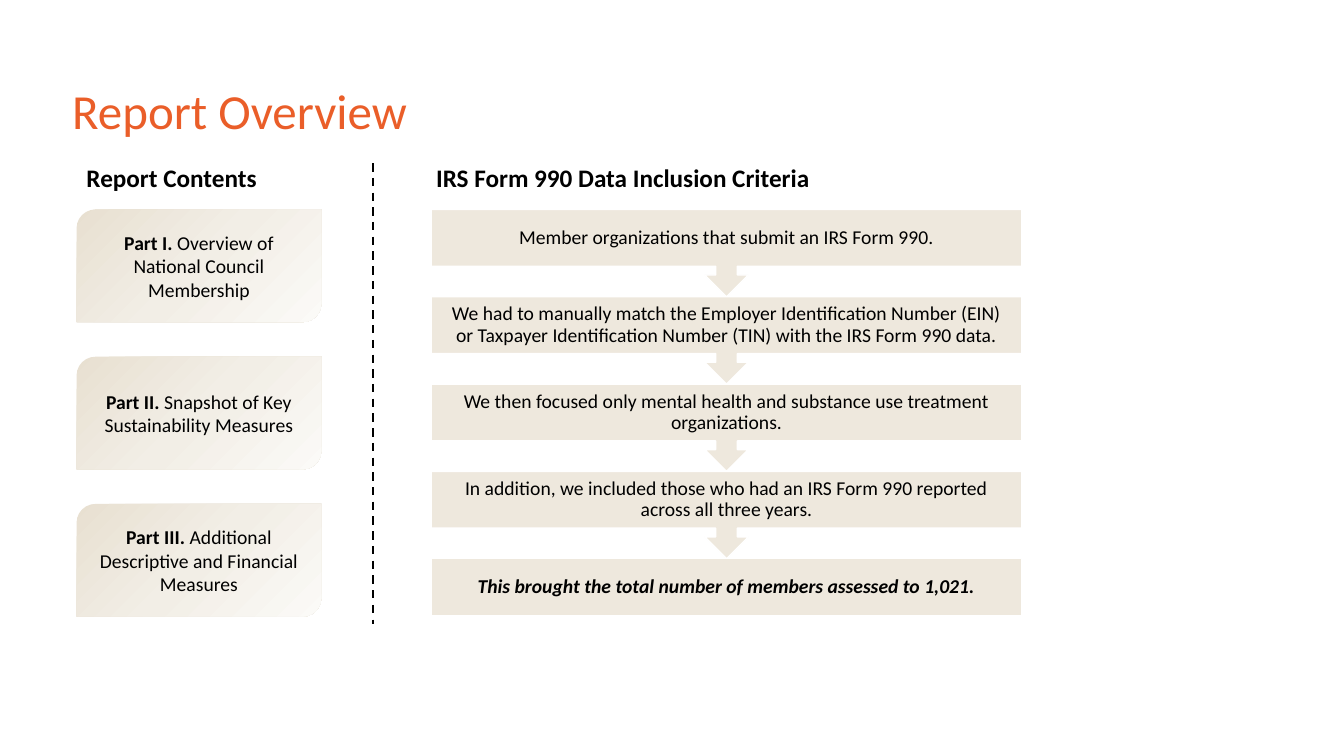
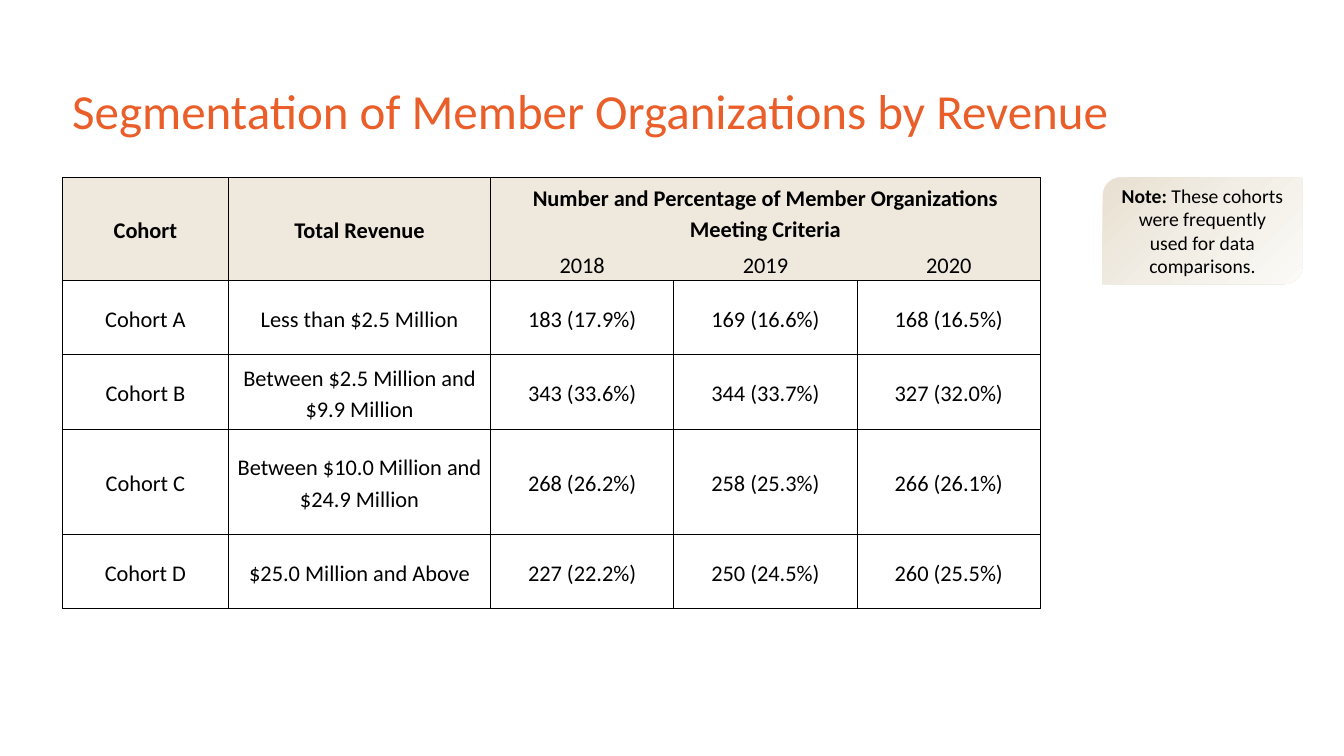
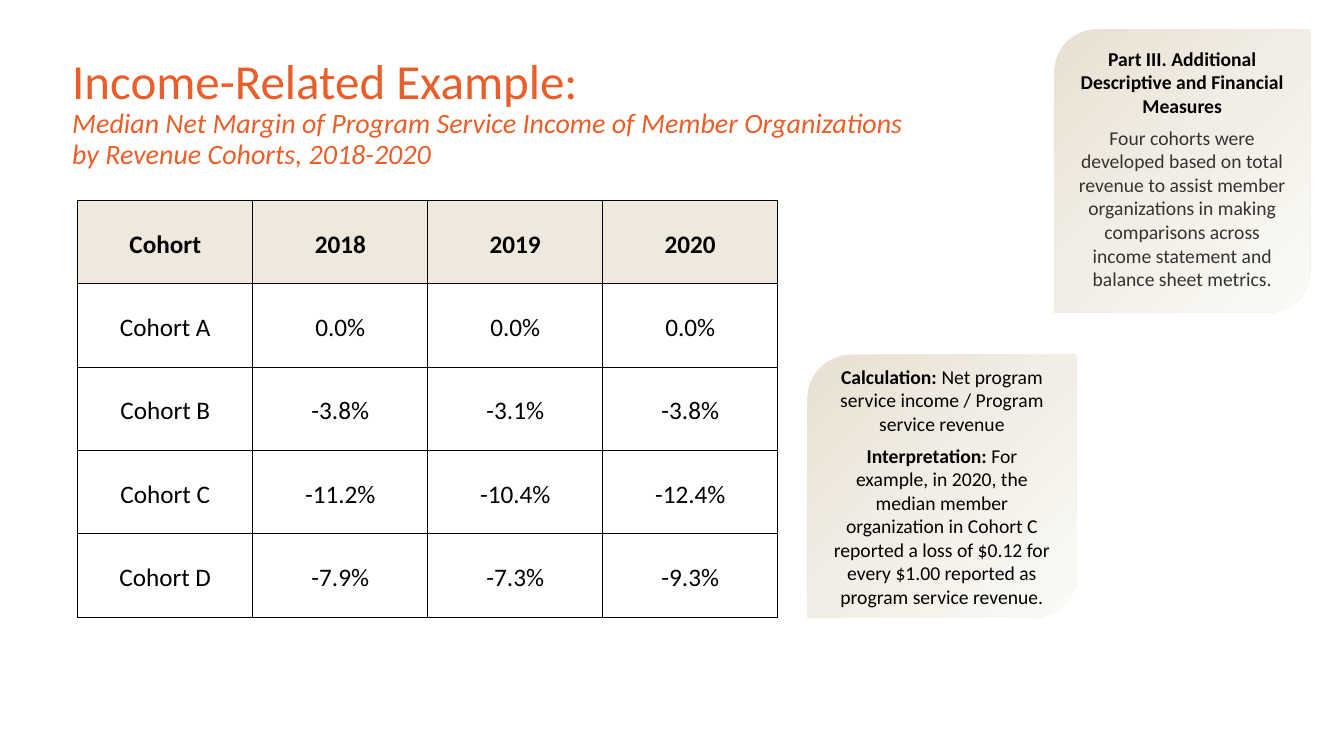
from lxml import etree
from pptx import Presentation
from pptx import util as u
from pptx.dml.color import RGBColor
from pptx.enum import dml, shapes, text
from pptx.oxml import parse_xml
from pptx.oxml.ns import nsdecls, qn

ORANGE = RGBColor(0xEA, 0x5E, 0x29)
BLACK = RGBColor(0x00, 0x00, 0x00)
GREY = RGBColor(0x33, 0x33, 0x33)
WHITE = RGBColor(0xFF, 0xFF, 0xFF)
SAND = RGBColor(0xEE, 0xE8, 0xDD)
CARD_STOPS = (
    (0, RGBColor(0xE8, 0xE0, 0xD1)),
    (50, RGBColor(0xF2, 0xEE, 0xE6)),
    (100, RGBColor(0xFB, 0xFA, 0xF7)),
)
FONT = "Calibri"
TITLE_BOX = (1.57, 1.02, 30.73, 3.68)
COHORTS = ("Cohort A", "Cohort B", "Cohort C", "Cohort D")
BOLD = {"bold": True}


def place(box):
    return [u.Cm(length) for length in box]


def write_text(frame, paragraphs, size=14, color=BLACK, bold=False, italic=False,
               align=text.PP_ALIGN.LEFT, anchor=text.MSO_ANCHOR.MIDDLE,
               line_spacing=1.0, after=0):
    frame.word_wrap = True
    frame.vertical_anchor = anchor
    for index, spans in enumerate(paragraphs):
        para = frame.add_paragraph() if index else frame.paragraphs[0]
        para.alignment = align
        para.line_spacing = line_spacing
        para.space_after = u.Pt(after)
        for words, changes in spans:
            style = {"size": size, "color": color, "bold": bold, "italic": italic, **changes}
            span = para.add_run()
            span.text = words
            span.font.name = FONT
            span.font.size = u.Pt(style["size"])
            span.font.color.rgb = style["color"]
            span.font.bold = style["bold"]
            span.font.italic = style["italic"]


def add_text(page, box, paragraphs, **style):
    write_text(page.shapes.add_textbox(*place(box)).text_frame, paragraphs, **style)


def add_page(deck, title, *subtitle):
    page = deck.slides.add_slide(deck.slide_layouts[6])
    lines = [[(title, {})]]
    lines += [[(line, {"size": 20, "italic": True})] for line in subtitle]
    add_text(page, TITLE_BOX, lines, size=35, color=ORANGE, line_spacing=0.9)
    return page


def add_card(page, box, paragraphs, anchor=text.MSO_ANCHOR.MIDDLE):
    card = page.shapes.add_shape(shapes.MSO_SHAPE.ROUND_2_DIAG_RECTANGLE, *place(box))
    stops = "".join(
        f'<a:gs pos="{percent * 1000}"><a:srgbClr val="{color}"/></a:gs>'
        for percent, color in CARD_STOPS
    )
    card._element.spPr.append(parse_xml(
        f'<a:gradFill {nsdecls("a")} rotWithShape="1"><a:gsLst>{stops}</a:gsLst>'
        '<a:lin ang="2700000" scaled="0"/></a:gradFill>'
    ))
    card.line.fill.background()
    card.shadow.inherit = False
    write_text(card.text_frame, paragraphs, align=text.PP_ALIGN.CENTER,
               anchor=anchor, after=6)


def add_contents(page, box, parts):
    left, top, width, height = box
    card_height = 2.84
    pitch = (height - card_height) / (len(parts) - 1)
    for index, (label, topic) in enumerate(parts):
        add_card(page, (left, top + index * pitch, width, card_height),
                 [[(label, BOLD), (topic, {})]])


def add_steps(page, box, steps):
    left, top, width, height = box
    body_height = 1.44
    last = len(steps) - 1
    pitch = (height - body_height) / last
    for index, words in enumerate(steps):
        is_last = index == last
        kind = shapes.MSO_SHAPE.RECTANGLE if is_last else shapes.MSO_SHAPE.DOWN_ARROW_CALLOUT
        step_height = body_height if is_last else pitch
        step = page.shapes.add_shape(
            kind, *place((left, top + index * pitch, width, step_height)))
        step.fill.solid()
        step.fill.fore_color.rgb = SAND
        step.line.color.rgb = WHITE
        step.line.width = u.Pt(1)
        step.shadow.inherit = False
        frame = step.text_frame
        frame.margin_left = frame.margin_right = u.Cm(0.28)
        frame.margin_top = frame.margin_bottom = u.Cm(0)
        write_text(frame, [[(words, {})]], bold=is_last, italic=is_last,
                   align=text.PP_ALIGN.CENTER, line_spacing=0.9)


def add_divider(page, x, top, bottom):
    divider = page.shapes.add_connector(
        shapes.MSO_CONNECTOR.STRAIGHT, *place((x, top, x, bottom)))
    divider.line.color.rgb = BLACK
    divider.line.width = u.Pt(1.5)
    divider.line.dash_style = dml.MSO_LINE.DASH
    etree.SubElement(divider._element.spPr, qn("a:effectLst"))


def set_borders(cell, sides):
    properties = cell._tc.get_or_add_tcPr()
    for side in "LRTB":
        paint = f'<a:solidFill><a:srgbClr val="{BLACK}"/></a:solidFill>'
        if side not in sides:
            paint = "<a:noFill/>"
        properties.append(parse_xml(
            f'<a:ln{side} {nsdecls("a")} w="6350">{paint}</a:ln{side}>'))


def add_grid(page, left, top, widths, heights, rows, size, header_rows=1,
             merges=(), sides=None):
    box = (left, top, sum(widths), sum(heights))
    grid = page.shapes.add_table(len(rows), len(widths), *place(box)).table
    grid.first_row = grid.horz_banding = False
    for column, width in zip(grid.columns, widths):
        column.width = u.Cm(width)
    for row, height in zip(grid.rows, heights):
        row.height = u.Cm(height)
    for row, values in enumerate(rows):
        for column, value in enumerate(values):
            cell = grid.cell(row, column)
            cell.margin_left = cell.margin_right = u.Cm(0.18)
            cell.margin_top = cell.margin_bottom = u.Cm(0)
            cell.vertical_anchor = text.MSO_ANCHOR.MIDDLE
            set_borders(cell, (sides or {}).get((row, column), "LRTB"))
            if row < header_rows:
                cell.fill.solid()
                cell.fill.fore_color.rgb = SAND
            else:
                cell.fill.background()
            if value:
                write_text(cell.text_frame, [[(line, {})] for line in value.split("\n")],
                           size=size, bold=row == 0, align=text.PP_ALIGN.CENTER,
                           line_spacing=1.15)
                cell.text_frame.word_wrap = None
    for first, final in merges:
        grid.cell(*first).merge(grid.cell(*final))


def build_overview(deck):
    page = add_page(deck, "Report Overview")
    add_contents(page, (1.93, 5.28, 6.17, 10.26), (
        ("Part I. ", "Overview of National Council Membership"),
        ("Part II. ", "Snapshot of Key Sustainability Measures"),
        ("Part III. ", "Additional Descriptive and Financial Measures"),
    ))
    add_divider(page, 9.4, 4.11, 15.72)
    add_steps(page, (10.87, 5.28, 14.88, 10.24), (
        "Member organizations that submit an IRS Form 990.",
        "We had to manually match the Employer Identification Number (EIN) or "
        "Taxpayer Identification Number (TIN) with the IRS Form 990 data.",
        "We then focused only mental health and substance use treatment organizations.",
        "In addition, we included those who had an IRS Form 990 reported across "
        "all three years.",
        "This brought the total number of members assessed to 1,021.",
    ))
    for left, width, heading in (
        (1.93, 6.17, "Report Contents"),
        (10.74, 15.01, "IRS Form 990 Data Inclusion Criteria"),
    ):
        add_text(page, (left, 3.96, width, 1.02), [[(heading, BOLD)]], size=18)


def build_segmentation(deck):
    page = add_page(deck, "Segmentation of Member Organizations by Revenue")
    revenues = ("Less than $2.5 Million", "Between $2.5 Million and $9.9 Million",
                "Between $10.0 Million and $24.9 Million", "$25.0 Million and Above")
    counts = (
        ("183 (17.9%)", "169 (16.6%)", "168 (16.5%)"),
        ("343 (33.6%)", "344 (33.7%)", "327 (32.0%)"),
        ("268 (26.2%)", "258 (25.3%)", "266 (26.1%)"),
        ("227 (22.2%)", "250 (24.5%)", "260 (25.5%)"),
    )
    rows = [
        ("Cohort", "Total Revenue",
         "Number and Percentage of Member Organizations\nMeeting Criteria", "", ""),
        ("", "", "2018", "2019", "2020"),
    ]
    rows += [(cohort, revenue, *values)
             for cohort, revenue, values in zip(COHORTS, revenues, counts)]
    add_grid(
        page, 1.57, 4.47, (4.19, 6.6, 4.62, 4.62, 4.62),
        (1.75, 0.84, 1.88, 1.88, 2.64, 1.88), rows, size=16, header_rows=2,
        merges=(((0, 0), (1, 0)), ((0, 1), (1, 1)), ((0, 2), (0, 4))),
        sides={(0, 2): "LRT", (0, 3): "T", (0, 4): "RT", (1, 0): "LRB",
               (1, 1): "LRB", (1, 2): "LB", (1, 3): "B", (1, 4): "RB"},
    )
    add_card(page, (27.79, 4.47, 5.03, 2.69), [[
        ("Note: ", BOLD),
        ("These cohorts were frequently used for data comparisons.", {}),
    ]])


def build_income(deck):
    page = add_page(
        deck, "Income-Related Example:",
        "Median Net Margin of Program Service Income of Member Organizations",
        "by Revenue Cohorts, 2018-2020",
    )
    add_card(page, (26.57, 0.74, 6.45, 7.14), [
        [("Part III. Additional Descriptive and Financial Measures", BOLD)],
        [("Four cohorts were developed based on total revenue to assist member "
          "organizations in making comparisons across income statement and "
          "balance sheet metrics.", {"color": GREY})],
    ], anchor=text.MSO_ANCHOR.TOP)
    margins = (
        ("0.0%", "0.0%", "0.0%"),
        ("-3.8%", "-3.1%", "-3.8%"),
        ("-11.2%", "-10.4%", "-12.4%"),
        ("-7.9%", "-7.3%", "-9.3%"),
    )
    rows = [("Cohort", "2018", "2019", "2020")]
    rows += [(cohort, *values) for cohort, values in zip(COHORTS, margins)]
    add_grid(page, 1.96, 5.05, [4.41] * 4, [2.1] * 5, rows, size=18)
    add_card(page, (20.35, 8.94, 6.78, 6.63), [
        [("Calculation: ", BOLD),
         ("Net program service income / Program service revenue", {})],
        [("Interpretation: ", BOLD),
         ("For example, in 2020, the median member organization in Cohort C "
          "reported a loss of $0.12 for every $1.00 reported as program "
          "service revenue.", {})],
    ])


def main():
    deck = Presentation()
    deck.slide_width = u.Cm(33.87)
    deck.slide_height = u.Cm(19.05)
    build_overview(deck)
    build_segmentation(deck)
    build_income(deck)
    deck.save("out.pptx")


if __name__ == "__main__":
    main()
